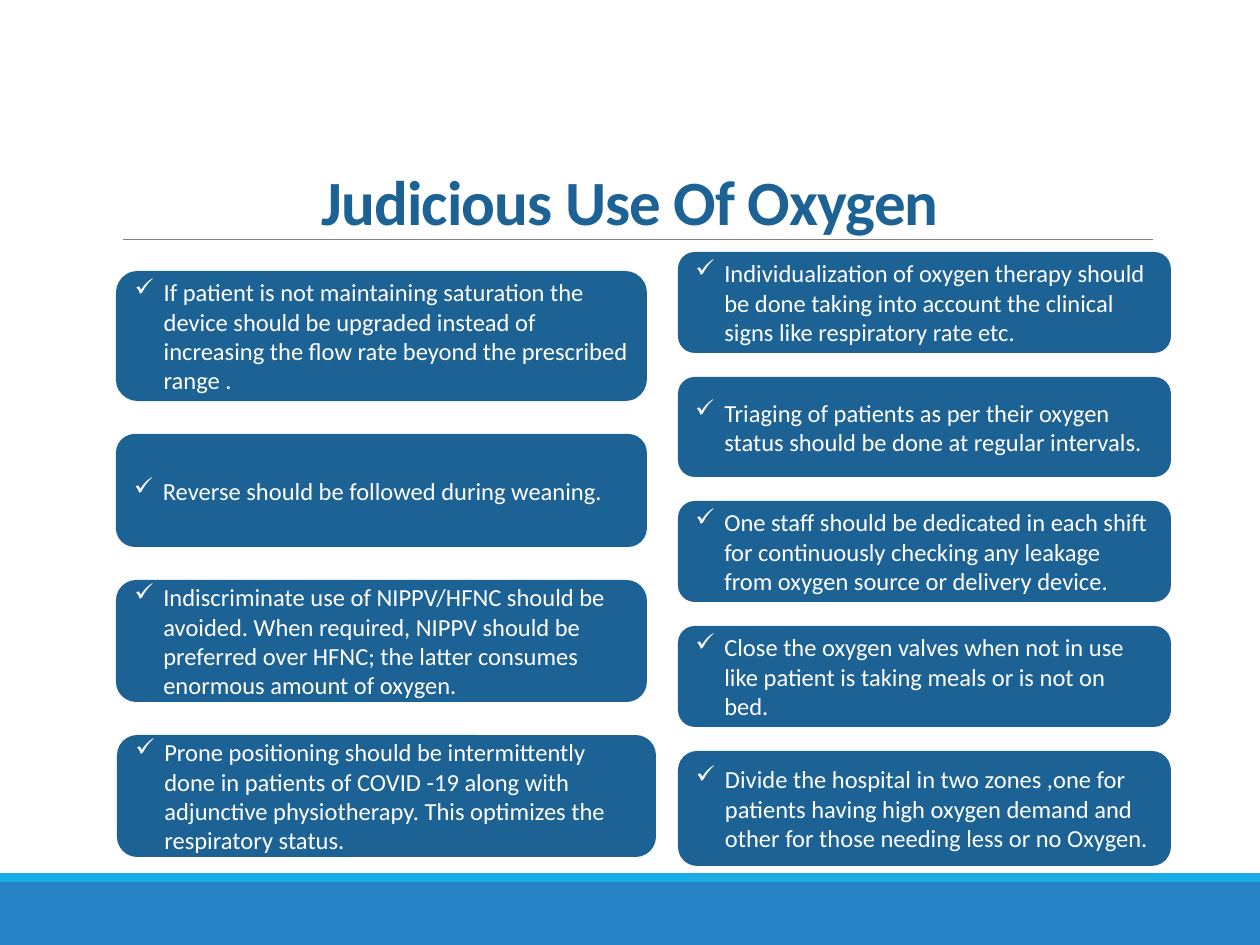
from dataclasses import dataclass
from lxml.etree import SubElement
from pptx import Presentation
from pptx.dml.color import RGBColor
from pptx.enum.shapes import MSO_CONNECTOR as Connector, MSO_SHAPE as Shape
from pptx.enum.text import MSO_ANCHOR as Anchor, PP_ALIGN as Align
from pptx.oxml.ns import qn
from pptx.util import Pt

EMU_PER_PX = 914400 / 126
FONT = "Calibri"
COLORS = {
    "card": "1D6294",
    "text": "FFFFFF",
    "rule": "808080",
    "footer": "2683C6",
    "stripe": "1CADE4",
}


@dataclass(frozen=True)
class Card:
    height: int
    advice: str
    shift: int = 0
    widen: int = 0


@dataclass(frozen=True)
class Column:
    left: int
    top: int
    width: int
    gap: int
    cards: tuple[Card, ...]


PATIENT_CARE = Column(116, 271, 531, 33, (
    Card(130, "If patient is not maintaining saturation the device should be upgraded "
              "instead of increasing the flow rate beyond the prescribed range ."),
    Card(113, "Reverse should be followed during weaning."),
    Card(122, "Indiscriminate use of NIPPV/HFNC should be avoided. When required, NIPPV "
              "should be preferred over HFNC; the latter consumes enormous amount of oxygen."),
    Card(122, "Prone positioning should be intermittently done in patients of COVID -19 "
              "along with adjunctive physiotherapy. This optimizes the respiratory status.",
         shift=1, widen=8),
))
WARD_MANAGEMENT = Column(678, 252, 493, 24, (
    Card(101, "Individualization of oxygen therapy should be done taking into account "
              "the clinical signs like respiratory rate etc."),
    Card(100, "Triaging of patients as per their oxygen status should be done at "
              "regular intervals."),
    Card(101, "One staff should be dedicated in each shift for continuously checking "
              "any leakage from oxygen source or delivery device."),
    Card(101, "Close the oxygen valves when not in use like patient is taking meals "
              "or is not on bed."),
    Card(115, "Divide the hospital in two zones ,one for patients having high oxygen "
              "demand and other for those needing less or no Oxygen."),
))


def px(length: int) -> int:
    return round(length * EMU_PER_PX)


def color(role: str) -> RGBColor:
    return RGBColor.from_string(COLORS[role])


def style_text(paragraph, size: int, role: str, bold: bool = False) -> None:
    for run in paragraph.runs:
        run.font.name = FONT
        run.font.size = Pt(size)
        run.font.bold = bold
        run.font.color.rgb = color(role)


def add_panel(slide, kind: Shape, left: int, top: int, width: int, height: int, role: str):
    panel = slide.shapes.add_shape(kind, px(left), px(top), px(width), px(height))
    panel.shadow.inherit = False
    panel.fill.solid()
    panel.fill.fore_color.rgb = color(role)
    panel.line.fill.background()
    return panel


def add_check_bullet(paragraph) -> None:
    properties = paragraph._p.get_or_add_pPr()
    properties.set("marL", str(px(29)))
    properties.set("indent", str(-px(29)))
    bullet_color = SubElement(properties, qn("a:buClr"))
    SubElement(bullet_color, qn("a:srgbClr"), val=COLORS["text"])
    SubElement(properties, qn("a:buChar"), char="✓")


def draw_column(slide, column: Column) -> None:
    top = column.top
    for card in column.cards:
        panel = add_panel(slide, Shape.ROUNDED_RECTANGLE, column.left + card.shift, top,
                          column.width + card.widen, card.height, "card")
        frame = panel.text_frame
        frame.text = card.advice
        frame.word_wrap = True
        frame.vertical_anchor = Anchor.MIDDLE
        advice = frame.paragraphs[0]
        advice.alignment = Align.LEFT
        add_check_bullet(advice)
        style_text(advice, 14, "text")
        top += card.height + column.gap


def draw_heading(slide) -> None:
    rule = slide.shapes.add_connector(Connector.STRAIGHT, px(123), px(239), px(1153), px(239))
    rule.line.color.rgb = color("rule")
    rule.line.width = Pt(0.5)
    SubElement(rule._element.spPr, qn("a:effectLst"))

    heading = slide.shapes.add_textbox(px(88), px(108), px(1084), px(130))
    frame = heading.text_frame
    frame.text = "Judicious Use Of Oxygen"
    frame.word_wrap = True
    frame.vertical_anchor = Anchor.BOTTOM
    frame.margin_left = frame.margin_right = frame.margin_top = frame.margin_bottom = 0
    title = frame.paragraphs[0]
    title.alignment = Align.CENTER
    style_text(title, 36, "card", bold=True)
    title.runs[0].font._element.set("spc", "-50")


def main() -> None:
    deck = Presentation()
    deck.slide_width, deck.slide_height = px(1260), px(945)
    slide = deck.slides.add_slide(deck.slide_layouts[6])
    add_panel(slide, Shape.RECTANGLE, 0, 882, 1260, 63, "footer")
    add_panel(slide, Shape.RECTANGLE, 0, 873, 1260, 9, "stripe")
    draw_heading(slide)
    for column in (PATIENT_CARE, WARD_MANAGEMENT):
        draw_column(slide, column)
    deck.save("out.pptx")


if __name__ == "__main__":
    main()
